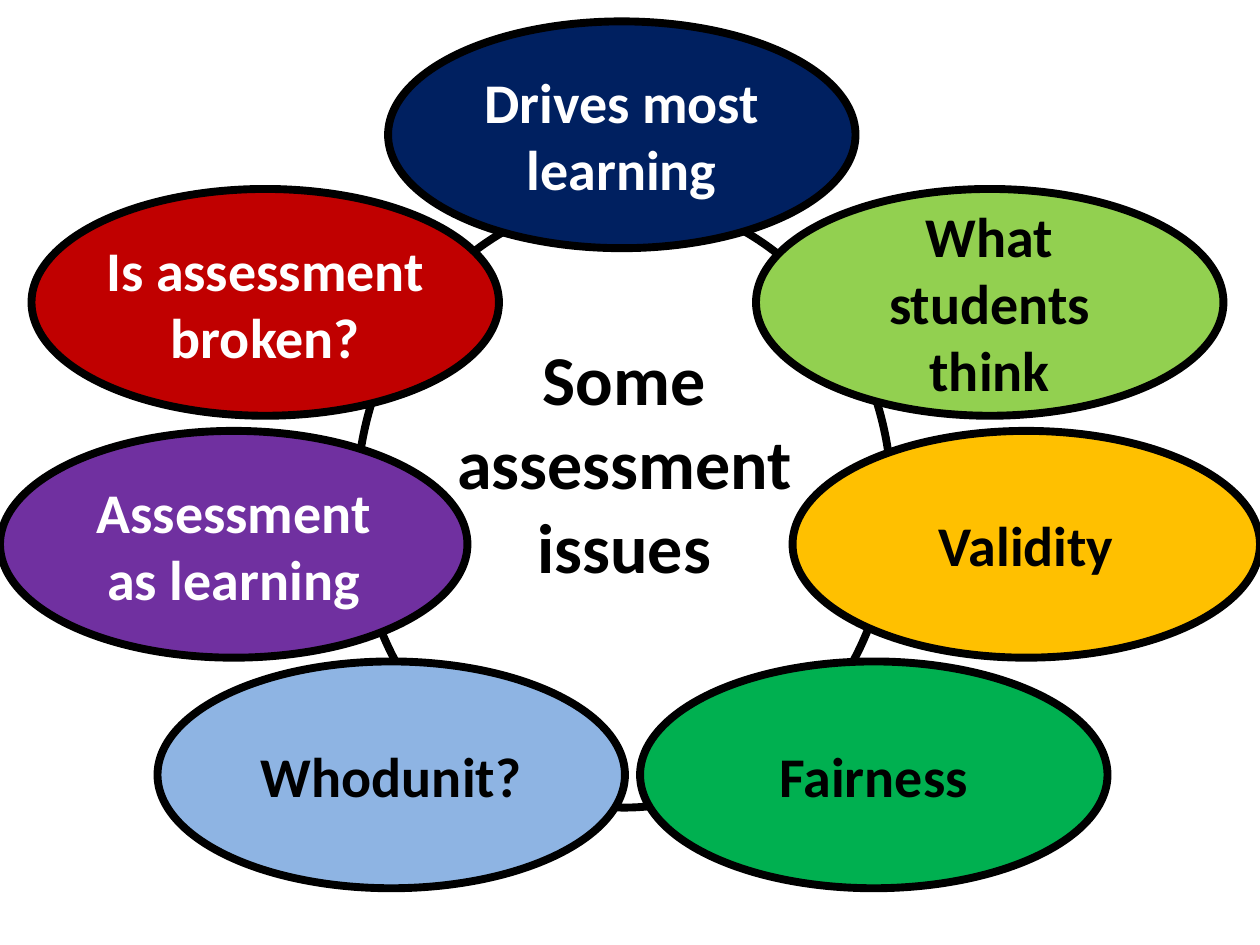
from pptx import Presentation
from pptx.dml.color import RGBColor
from pptx.enum.shapes import MSO_SHAPE
from pptx.enum.text import MSO_ANCHOR, PP_ALIGN
from pptx.util import Inches, Pt

ELLIPSE = MSO_SHAPE.OVAL
MIDDLE = MSO_ANCHOR.MIDDLE
CENTER = PP_ALIGN.CENTER

BLACK, WHITE = "000000", "FFFFFF"
ISSUE_WIDTH, ISSUE_HEIGHT = 3.71, 1.8


def color(hex_string):
    return RGBColor.from_string(hex_string)


class Diagram:
    """Holds the style and the slide being drawn."""

    font_name = "Calibri"
    outline = BLACK
    outline_width = 4.5

    def __init__(self, slide):
        self.slide = slide

    def ellipse(self, left, top, width, height, fill, lines, size,
                text_color=BLACK, insets=(0, 0, 0, 0)):
        shape = self.slide.shapes.add_shape(
            ELLIPSE, Inches(left), Inches(top), Inches(width), Inches(height))
        shape.shadow.inherit = False
        shape.fill.solid()
        shape.fill.fore_color.rgb = color(fill)
        shape.line.color.rgb = color(self.outline)
        shape.line.width = Pt(self.outline_width)

        frame = shape.text_frame
        frame.word_wrap = True
        frame.vertical_anchor = MIDDLE
        (frame.margin_left, frame.margin_top,
         frame.margin_right, frame.margin_bottom) = map(Inches, insets)
        frame.text = "\n".join(lines)
        for paragraph in frame.paragraphs:
            paragraph.alignment = CENTER
            font = paragraph.font
            font.name = self.font_name
            font.size = Pt(size)
            font.bold = True
            font.color.rgb = color(text_color)

    def issue(self, left, top, fill, text, text_color=BLACK):
        self.ellipse(left, top, ISSUE_WIDTH, ISSUE_HEIGHT, fill, [text], 32,
                     text_color)


def main():
    presentation = Presentation()
    presentation.slide_width = Inches(10)
    presentation.slide_height = Inches(7.5)
    slide = presentation.slides.add_slide(presentation.slide_layouts[6])
    diagram = Diagram(slide)

    # Central ring, with its title raised by a deep bottom inset
    diagram.ellipse(2.83, 1.58, 4.25, 4.83, WHITE,
                    ["Some assessment", "issues"], 40,
                    insets=(0.1, 0.05, 0.1, 0.71))

    # Issues around the ring
    issues = [
        (6.29, 3.42, "FFC000", "Validity", BLACK),
        (0.25, 1.5, "C00000", "Is assessment broken?", WHITE),
        (6, 1.5, "92D050", "What students think", BLACK),
        (0, 3.42, "7030A0", "Assessment as learning", WHITE),
        (3.08, 0.17, "002060", "Drives most learning", WHITE),
        (1.25, 5.25, "8EB4E3", "Whodunit?", BLACK),
        (5.08, 5.25, "00B050", "Fairness", BLACK),
    ]
    for issue in issues:
        diagram.issue(*issue)

    presentation.save("out.pptx")


if __name__ == "__main__":
    main()
